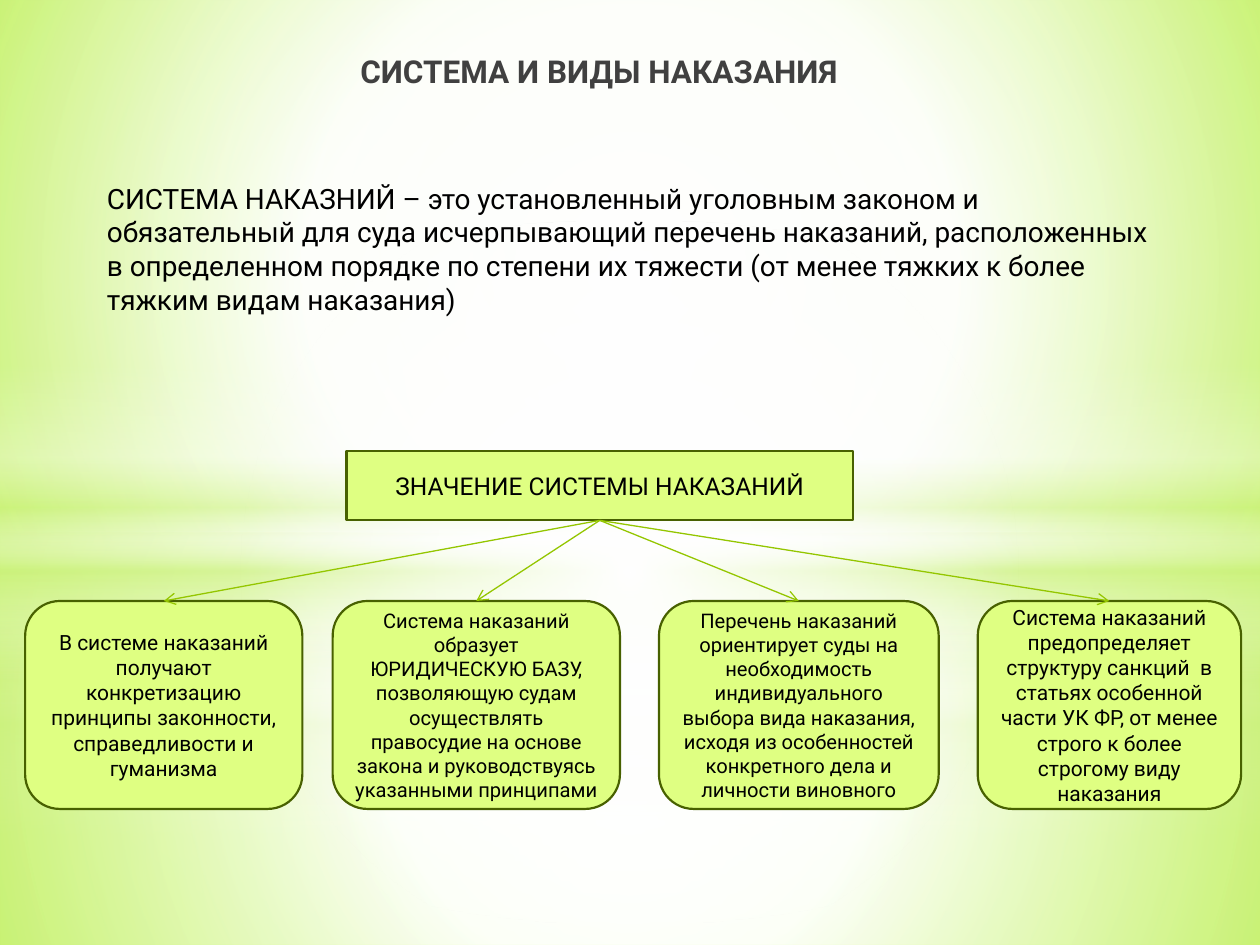
"""Builds the slide on the system and kinds of punishment."""
import lxml.etree
import pptx
import pptx.dml.color
import pptx.enum.shapes
import pptx.enum.text
import pptx.oxml
import pptx.oxml.ns
import pptx.util

Inches = pptx.util.Inches
RGBColor = pptx.dml.color.RGBColor
Shapes = pptx.enum.shapes.MSO_SHAPE
Align = pptx.enum.text.PP_ALIGN
Anchor = pptx.enum.text.MSO_ANCHOR
qn = pptx.oxml.ns.qn

BLACK = RGBColor(0x00, 0x00, 0x00)
WHITE = RGBColor(0xFF, 0xFF, 0xFF)
HEADING = RGBColor(0x40, 0x40, 0x40)
LIME = RGBColor(0xDF, 0xFF, 0x82)
OLIVE = RGBColor(0x48, 0x61, 0x00)
ARROW = RGBColor(0x94, 0xC6, 0x00)
GLOW = RGBColor(0xCA, 0xF2, 0x78)
PALE = RGBColor(0xEA, 0xFA, 0xC9)
MIST = RGBColor(0xF7, 0xFF, 0xE7)
VIVID = RGBColor(0xB7, 0xFF, 0x29)


def apply_gradient(parent, stops, focus=None):
    stop_xml = "".join(
        f'<a:gs pos="{position * 1000}"><a:srgbClr val="{color}">'
        f'<a:alpha val="{opacity * 1000}"/></a:srgbClr></a:gs>'
        for position, color, opacity in stops)
    direction = '<a:lin ang="5400000" scaled="0"/>'
    if focus:
        left, top, right, bottom = (side * 1000 for side in focus)
        direction = (f'<a:path path="circle"><a:fillToRect l="{left}" t="{top}" '
                     f'r="{right}" b="{bottom}"/></a:path>')
    gradient = pptx.oxml.parse_xml(
        f'<a:gradFill {pptx.oxml.ns.nsdecls("a")} rotWithShape="1">'
        f'<a:gsLst>{stop_xml}</a:gsLst>{direction}</a:gradFill>')
    parent.replace(parent.find(qn("a:solidFill")), gradient)


def write(shape, text, size, color=BLACK, bold=False, align=Align.CENTER, anchor=Anchor.MIDDLE):
    frame = shape.text_frame
    frame.text = text
    frame.word_wrap = True
    frame.vertical_anchor = anchor
    frame.paragraphs[0].alignment = align
    font = frame.paragraphs[0].runs[0].font
    for name, value in {"name": "Roboto", "size": pptx.util.Pt(size), "bold": bold}.items():
        setattr(font, name, value)
    font.color.rgb = color


deck = pptx.Presentation()
deck.slide_width, deck.slide_height = Inches(10), Inches(7.5)
slide = deck.slides.add_slide(deck.slide_layouts[5])

slide.background.fill.solid()
apply_gradient(slide.element.find(".//" + qn("p:bgPr")),
               [(0, PALE, 100), (60, MIST, 100), (100, VIVID, 100)], (20, 10, 20, 60))

CENTER = (50, 50, 50, 50)
floor = [(0, WHITE, 91), (37, WHITE, 76), (100, GLOW, 79)]
sky = [(0, WHITE, 89), (48, WHITE, 62), (100, GLOW, 79)]
horizon = [(0, WHITE, 0), (29, WHITE, 30), (45, GLOW, 40),
           (55, WHITE, 26), (65, GLOW, 60), (100, WHITE, 0)]
for split, band_top, halo_edge in [(5.58, 4.12, 56), (4.23, 2.9, 54)]:
    halo = [(0, WHITE, 100), (halo_edge, WHITE, 0)]
    for kind, top, height, stops, focus in [
        (Shapes.RECTANGLE, split, 7.5 - split, floor, CENTER),
        (Shapes.RECTANGLE, 0, split, sky, CENTER),
        (Shapes.RECTANGLE, band_top, 2.5, horizon, None),
        (Shapes.OVAL, 1.75, 5.58, halo, CENTER),
    ]:
        layer = slide.shapes.add_shape(kind, 0, Inches(top), Inches(10), Inches(height))
        layer.shadow.inherit = False
        layer.line.fill.background()
        layer.fill.solid()
        apply_gradient(layer.element.spPr, stops, focus)

heading = slide.shapes.title
slide.shapes.element.append(heading.element)
for name, value in {"left": 2.56, "top": 0.36, "width": 4.57, "height": 0.64}.items():
    setattr(heading, name, Inches(value))
write(heading, "СИСТЕМА И ВИДЫ НАКАЗАНИЯ", 18, HEADING, True, Align.LEFT, Anchor.TOP)
heading.text_frame.paragraphs[0]._p.get_or_add_pPr().set("marL", str(Inches(0.2)))

definition = slide.shapes.add_textbox(Inches(0.75), Inches(1.39), Inches(8.58), Inches(1.18))
write(definition,
      "СИСТЕМА НАКАЗНИЙ – это установленный уголовным законом и обязательный для суда "
      "исчерпывающий перечень наказаний, расположенных в определенном порядке по степени "
      "их тяжести (от менее тяжких к более тяжким видам наказания)",
      16, align=Align.LEFT, anchor=Anchor.TOP)

RECT, ROUND = Shapes.RECTANGLE, Shapes.ROUNDED_RECTANGLE
boxes = []
for kind, left, top, width, height, size, text in [
    (RECT, 2.75, 3.58, 4.02, 0.55, 14, "ЗНАЧЕНИЕ СИСТЕМЫ НАКАЗАНИЙ"),
    (ROUND, 0.2, 4.77, 2.2, 1.65, 12,
     "В системе наказаний получают конкретизацию принципы законности, "
     "справедливости и гуманизма"),
    (ROUND, 2.64, 4.77, 2.28, 1.65, 11.5,
     "Система наказаний образует ЮРИДИЧЕСКУЮ БАЗУ, позволяющую судам осуществлять "
     "правосудие на основе закона и руководствуясь указанными принципами"),
    (ROUND, 5.23, 4.77, 2.22, 1.65, 11.5,
     "Перечень наказаний ориентирует суды на необходимость индивидуального выбора "
     "вида наказания, исходя из особенностей конкретного дела и личности виновного"),
    (ROUND, 7.76, 4.77, 2.09, 1.65, 12,
     "Система наказаний предопределяет структуру санкций  в статьях особенной части "
     "УК ФР, от менее строго к более строгому виду наказания"),
]:
    box = slide.shapes.add_shape(kind, Inches(left), Inches(top), Inches(width), Inches(height))
    box.shadow.inherit = False
    box.fill.solid()
    box.fill.fore_color.rgb = LIME
    box.line.color.rgb = OLIVE
    box.line.width = pptx.util.Pt(1.25)
    write(box, text, size)
    boxes.append(box)

significance, *reasons = boxes
for reason in reasons:
    arrow = slide.shapes.add_connector(pptx.enum.shapes.MSO_CONNECTOR.STRAIGHT, 0, 0, 0, 0)
    arrow.begin_connect(significance, 2)
    arrow.end_connect(reason, 0)
    arrow.line.color.rgb = ARROW
    arrow.line.width = pptx.util.Pt(0.75)
    lxml.etree.SubElement(arrow.line._get_or_add_ln(), qn("a:tailEnd"), type="arrow")
    lxml.etree.SubElement(arrow._element.spPr, qn("a:effectLst"))

deck.save("out.pptx")
